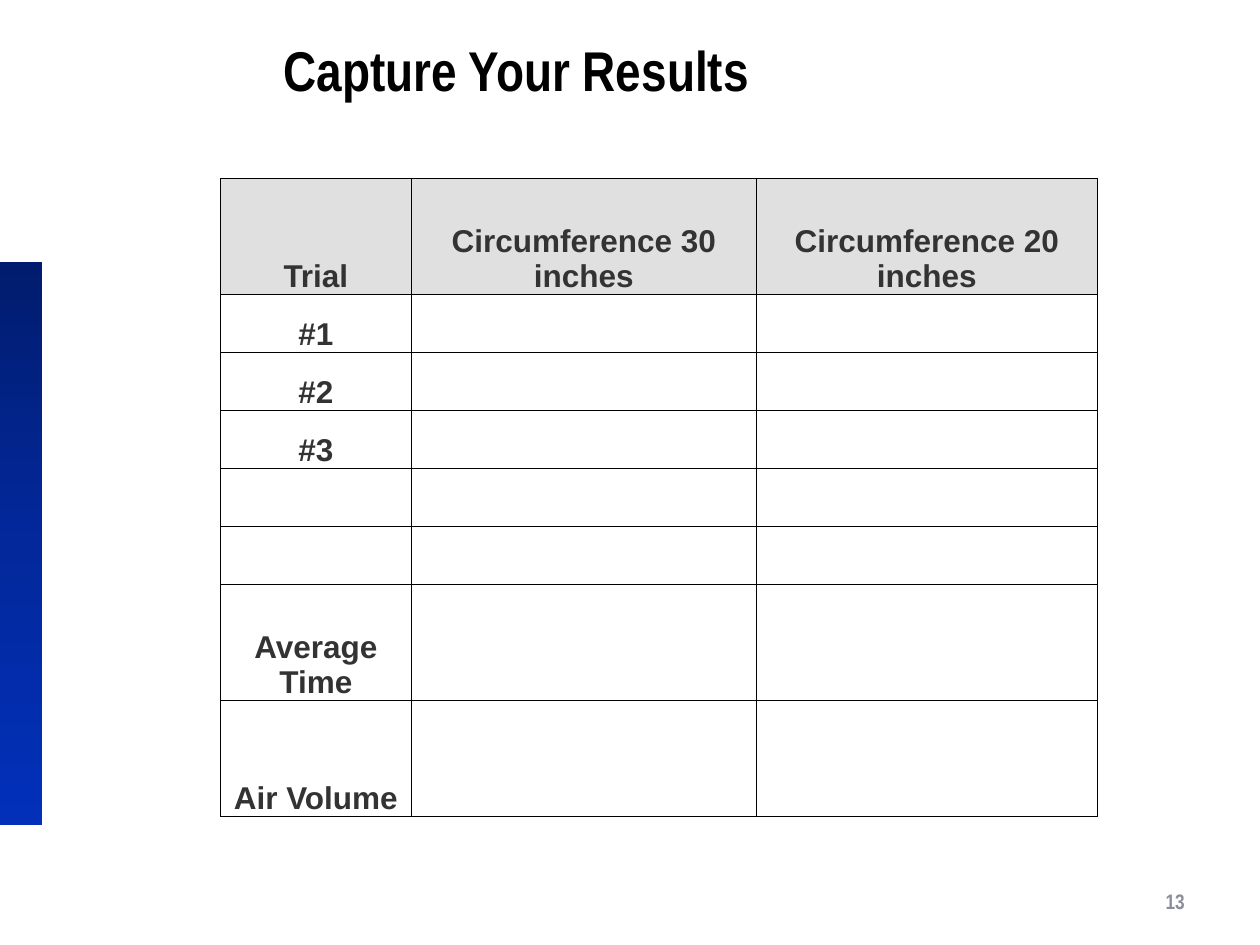
from copy import deepcopy
from dataclasses import dataclass

from lxml.etree import SubElement
from pptx import Presentation
from pptx.dml.color import RGBColor as Color
from pptx.enum.shapes import MSO_SHAPE as Preset
from pptx.enum.text import MSO_ANCHOR as Anchor, PP_ALIGN as Align
from pptx.oxml import parse_xml
from pptx.oxml.ns import nsdecls, qn
from pptx.util import Pt


@dataclass(frozen=True)
class Theme:
    heading_font: str = "Arial Narrow"
    body_font: str = "Arial"
    title_size: float = 32
    table_size: float = 18
    number_size: float = 12
    title_color: str = "000000"
    table_color: str = "333333"
    number_color: str = "8C8D9A"
    header_fill: str = "E0E0E0"
    border_color: str = "000000"
    border_width: float = 0.5
    band_colors: tuple = ("011C6E", "02289C", "0230B9")


class SlideBuilder:
    def __init__(self, slide, theme):
        self.slide = slide
        self.theme = theme

    def add_run(self, paragraph, text, font, size, color):
        run = paragraph.add_run()
        run.text = text
        run.font.name = font
        run.font.size = Pt(size)
        run.font.bold = True
        run.font.color.rgb = Color.from_string(color)

    def add_band(self, *box):
        shape = self.slide.shapes.add_shape(Preset.RECTANGLE, *map(Pt, box))
        shape.shadow.inherit = False
        shape.line.fill.background()
        shape.fill.gradient()
        shape.fill.gradient_angle = 270
        stop_list = next(shape._element.iter(qn("a:gsLst")))
        stop_list.insert(1, deepcopy(stop_list[0]))
        colors = self.theme.band_colors
        for index, (stop, color) in enumerate(zip(shape.fill.gradient_stops, colors)):
            stop.position = index / (len(colors) - 1)
            stop.color.rgb = Color.from_string(color)

    def add_text(self, text, box, size, color, alignment, line_spacing=1.0):
        frame = self.slide.shapes.add_textbox(*map(Pt, box)).text_frame
        frame.word_wrap = True
        frame.vertical_anchor = Anchor.MIDDLE
        paragraph = frame.paragraphs[0]
        paragraph.alignment = alignment
        paragraph.line_spacing = line_spacing
        self.add_run(paragraph, text, self.theme.heading_font, size, color)

    def style_cell(self, cell, text, is_header):
        theme = self.theme
        cell.margin_left = cell.margin_right = cell.margin_top = cell.margin_bottom = 0
        cell.vertical_anchor = Anchor.BOTTOM
        if is_header:
            cell.fill.solid()
            cell.fill.fore_color.rgb = Color.from_string(theme.header_fill)
        else:
            cell.fill.background()
        properties = cell._tc.get_or_add_tcPr()
        for index, side in enumerate(("lnL", "lnR", "lnT", "lnB")):
            border = parse_xml(f'<a:{side} {nsdecls("a")} w="{Pt(theme.border_width)}"/>')
            fill = SubElement(border, qn("a:solidFill"))
            SubElement(fill, qn("a:srgbClr"), val=theme.border_color)
            properties.insert(index, border)
        paragraph = cell.text_frame.paragraphs[0]
        paragraph.alignment = Align.CENTER
        if text:
            self.add_run(paragraph, text, theme.body_font, theme.table_size, theme.table_color)

    def add_table(self, left, top, column_widths, row_heights, headers, labels):
        frame = self.slide.shapes.add_table(
            len(row_heights), len(column_widths),
            Pt(left), Pt(top), Pt(sum(column_widths)), Pt(sum(row_heights)))
        table = frame.table
        for column, width in zip(table.columns, column_widths):
            column.width = Pt(width)
        blanks = [""] * (len(headers) - 1)
        contents = [headers] + [[label] + blanks for label in labels]
        for index, (row, height, texts) in enumerate(zip(table.rows, row_heights, contents)):
            row.height = Pt(height)
            for cell, text in zip(row.cells, texts):
                self.style_cell(cell, text, index == 0)


def main():
    presentation = Presentation()
    presentation.slide_width = Pt(720)
    presentation.slide_height = Pt(540)
    theme = Theme()
    builder = SlideBuilder(presentation.slides.add_slide(presentation.slide_layouts[6]), theme)

    builder.add_band(0, 149.75, 24, 321.75)
    builder.add_text("Capture Your Results", (79.2, 13.5, 432, 57),
                     theme.title_size, theme.title_color, Align.CENTER, 0.88)
    builder.add_text("13", (516, 500.5, 168, 28.75),
                     theme.number_size, theme.number_color, Align.RIGHT)

    single, double = 33.15, 66.3
    builder.add_table(
        126, 102, (109, 197.25, 194.75),
        [double] + [single] * 5 + [double] * 2,
        ["Trial", "Circumference 30 inches", "Circumference 20 inches"],
        ["#1", "#2", "#3", "", "", "Average Time", "Air Volume"])

    presentation.save("out.pptx")


if __name__ == "__main__":
    main()
